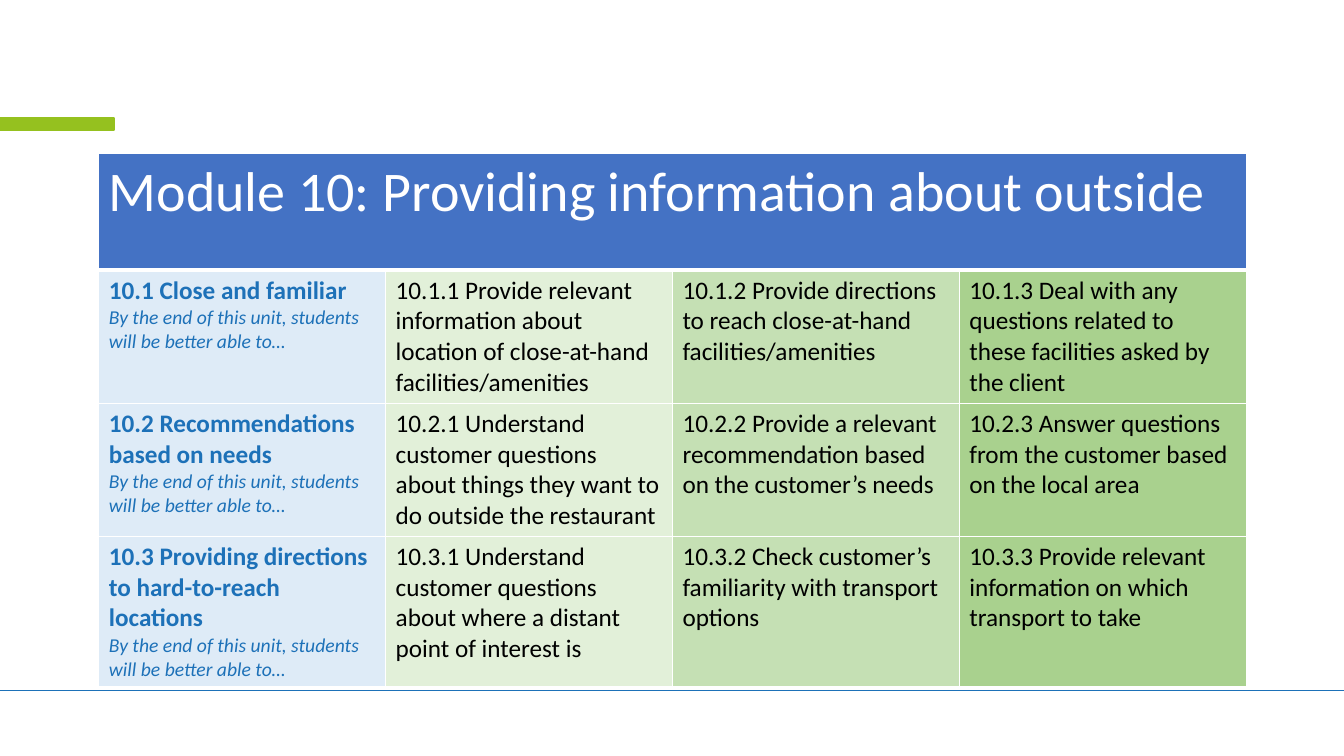
import pptx
import pptx.dml.color
import pptx.enum.shapes
import pptx.oxml
import pptx.oxml.ns
import pptx.util
from lxml import etree

Inches = pptx.util.Inches
Pt = pptx.util.Pt
RGBColor = pptx.dml.color.RGBColor
qn = pptx.oxml.ns.qn

WHITE = RGBColor(0xFF, 0xFF, 0xFF)
BLACK = RGBColor(0, 0, 0)
BLUE = RGBColor(0x1D, 0x71, 0xB8)
LIME = RGBColor(0x95, 0xC1, 0x1F)
HEADER_BLUE = RGBColor(0x44, 0x72, 0xC4)
COLUMN_FILLS = [
    RGBColor(0xDE, 0xEB, 0xF7),
    RGBColor(0xE2, 0xF0, 0xD9),
    RGBColor(0xC5, 0xE0, 0xB4),
    RGBColor(0xA9, 0xD1, 0x8E),
]

FONT = "Calibri"
TITLE = "Module 10: Providing information about outside"
UNIT_AIM = "By the end of this unit, students will be better able to…"
UNITS = [
    [
        "10.1 Close and familiar",
        "10.1.1 Provide relevant information about location of close-at-hand facilities/amenities",
        "10.1.2 Provide directions to reach close-at-hand facilities/amenities",
        "10.1.3 Deal with any questions related to these facilities asked by the client",
    ],
    [
        "10.2 Recommendations based on needs",
        "10.2.1 Understand customer questions about things they want to do outside the restaurant",
        "10.2.2 Provide a relevant recommendation based on the customer’s needs",
        "10.2.3 Answer questions from the customer based on the local area",
    ],
    [
        "10.3 Providing directions to hard-to-reach locations",
        "10.3.1 Understand customer questions about where a distant point of interest is",
        "10.3.2 Check customer’s familiarity with transport options",
        "10.3.3 Provide relevant information on which transport to take",
    ],
]


def add_rule(s, y, width):
    line = s.shapes.add_connector(
        pptx.enum.shapes.MSO_CONNECTOR.STRAIGHT, 0, y, width, y)
    line.line.color.rgb = BLUE
    line.line.width = Pt(1)
    etree.SubElement(line._element.spPr, qn("a:effectLst"))


def add_accent_bar(s):
    sp = s.shapes.add_shape(
        pptx.enum.shapes.MSO_SHAPE.RECTANGLE,
        0, Inches(1.17), Inches(1.13), Inches(0.12))
    sp.shadow.inherit = False
    sp.fill.solid()
    sp.fill.fore_color.rgb = LIME
    sp.line.color.rgb = LIME
    sp.line.width = Pt(1)


def set_borders(cell, bottom=1):
    tcPr = cell._tc.get_or_add_tcPr()
    for side, width in (("L", 1), ("R", 1), ("T", 1), ("B", bottom)):
        ln = etree.SubElement(tcPr, qn(f"a:ln{side}"), w=str(Pt(width)))
        fill = etree.SubElement(ln, qn("a:solidFill"))
        etree.SubElement(fill, qn("a:srgbClr"), val=str(WHITE))


def fill_cell(cell, color):
    cell.fill.solid()
    cell.fill.fore_color.rgb = color


def format_paragraph(p, size, color, bold=False, italic=False):
    for r in p.runs:
        r.font.name = FONT
        r.font.size = Pt(size)
        r.font.color.rgb = color
        r.font.bold = bold
        r.font.italic = italic


def write_unit(cell, heading):
    tf = cell.text_frame
    tf.text = heading
    format_paragraph(tf.paragraphs[0], 18, BLUE, bold=True)
    p = tf.add_paragraph()
    p.text = UNIT_AIM
    format_paragraph(p, 14, BLUE, italic=True)


def write_text(cell, text, size, color):
    cell.text_frame.text = text
    format_paragraph(cell.text_frame.paragraphs[0], size, color)


def add_module_table(s):
    rows, cols = len(UNITS) + 1, len(COLUMN_FILLS)
    table = s.shapes.add_table(
        rows, cols, Inches(0.98), Inches(1.52),
        Inches(11.38), Inches(1.16 * rows)).table

    for cell in table.rows[0].cells:
        set_borders(cell, bottom=3)
        fill_cell(cell, HEADER_BLUE)
    header = table.cell(0, 0)
    header.merge(table.cell(0, cols - 1))
    write_text(header, TITLE, 40, WHITE)

    for row, unit in enumerate(UNITS, 1):
        for col, (text, color) in enumerate(zip(unit, COLUMN_FILLS)):
            cell = table.cell(row, col)
            set_borders(cell)
            fill_cell(cell, color)
            if col == 0:
                write_unit(cell, text)
            else:
                write_text(cell, text, 18, BLACK)


def main():
    prs = pptx.Presentation()
    prs.slide_width = Inches(13.33)
    prs.slide_height = Inches(7.5)
    s = prs.slides.add_slide(prs.slide_layouts[6])
    add_rule(s, Inches(6.85), prs.slide_width)
    add_accent_bar(s)
    add_module_table(s)
    prs.save("out.pptx")


if __name__ == "__main__":
    main()
